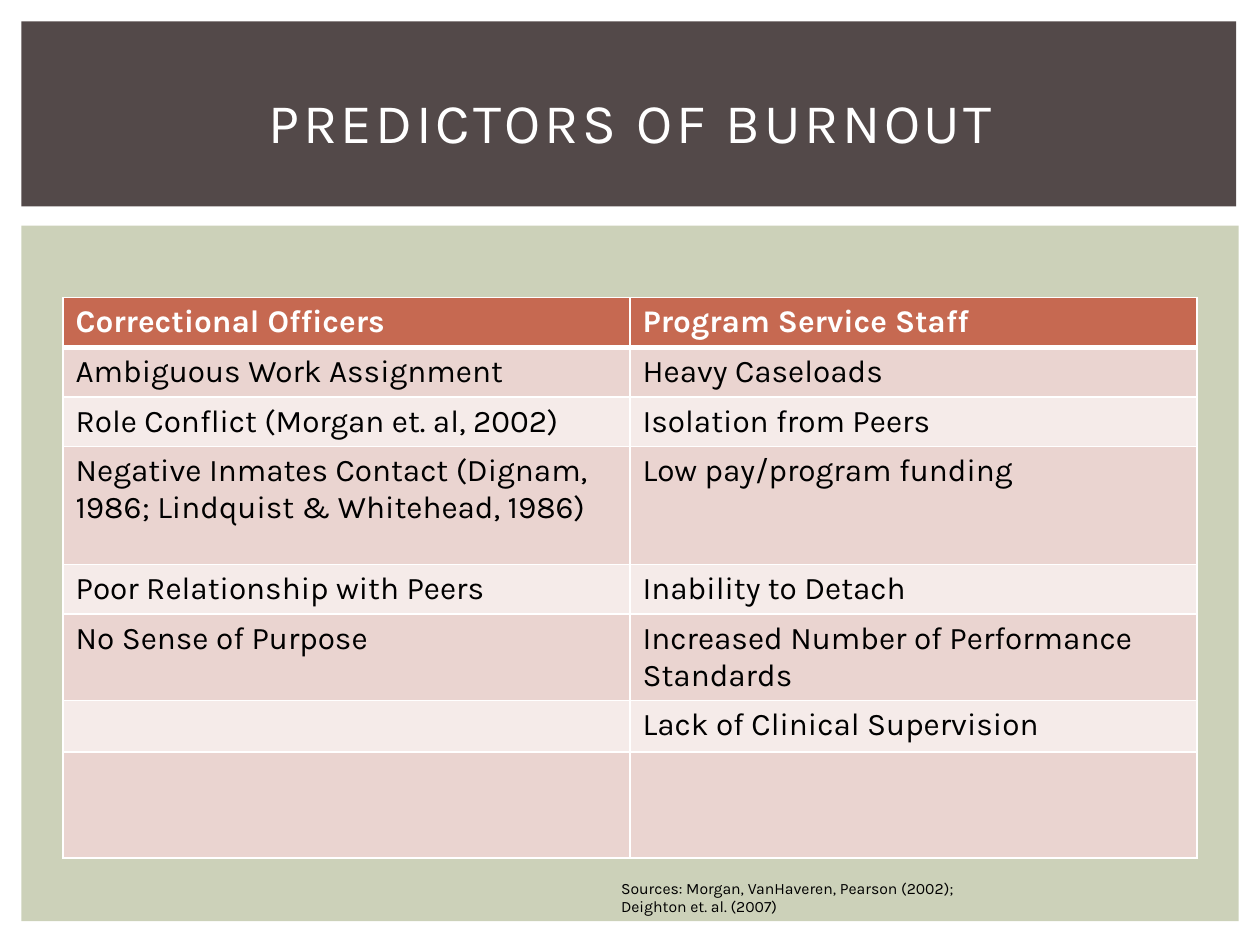
import lxml.etree
import pptx
import pptx.dml.color
import pptx.enum.shapes
import pptx.enum.text
import pptx.oxml.ns
import pptx.util

Cm = pptx.util.Cm
RGBColor = pptx.dml.color.RGBColor

WHITE = RGBColor(0xFF, 0xFF, 0xFF)
BLACK = RGBColor(0x00, 0x00, 0x00)
SAGE = RGBColor(0xCC, 0xD1, 0xB9)
BROWN = RGBColor(0x53, 0x49, 0x49)
RUST = RGBColor(0xC6, 0x69, 0x51)
PINK = RGBColor(0xEA, 0xD4, 0xD0)
PALE_PINK = RGBColor(0xF5, 0xEB, 0xE9)


def write_text(text_frame, text, size=18, color=BLACK, bold=False, alignment=None, spacing=0):
    """Write one paragraph per line of text; spacing is the letter spacing in points."""
    text_frame.word_wrap = True
    for index, line in enumerate(text.split("\n")):
        paragraph = text_frame.add_paragraph() if index else text_frame.paragraphs[0]
        paragraph.alignment = alignment
        run = paragraph.add_run()
        run.text = line
        run.font.name = "Karla"
        run.font.size = pptx.util.Pt(size)
        run.font.bold = bold
        run.font.color.rgb = color
        if spacing:
            run.font._element.set("spc", str(spacing * 100))


def add_borders(cell, widths):
    """Draw white borders; widths gives points for left, right, top and bottom."""
    properties = cell._tc.get_or_add_tcPr()
    for index, (side, width) in enumerate(zip("LRTB", widths)):
        line = lxml.etree.Element(pptx.oxml.ns.qn(f"a:ln{side}"), w=str(pptx.util.Pt(width)))
        fill = lxml.etree.SubElement(line, pptx.oxml.ns.qn("a:solidFill"))
        lxml.etree.SubElement(fill, pptx.oxml.ns.qn("a:srgbClr"), val=str(WHITE))
        properties.insert(index, line)


presentation = pptx.Presentation()
presentation.slide_width = Cm(25.4)
presentation.slide_height = Cm(19.05)
slide = presentation.slides.add_slide(presentation.slide_layouts[6])

# Background panels: content area and title band
for top, width, height, color in ((4.55, 24.54, 14.02, SAGE), (0.43, 24.49, 3.73, BROWN)):
    panel = slide.shapes.add_shape(
        pptx.enum.shapes.MSO_SHAPE.RECTANGLE, Cm(0.43), Cm(top), Cm(width), Cm(height)
    )
    panel.shadow.inherit = False
    panel.fill.solid()
    panel.fill.fore_color.rgb = color
    panel.line.fill.background()

# Table of predictors
rows = (
    (0.97, "Correctional Officers", "Program Service Staff"),
    (0.97, "Ambiguous Work Assignment", "Heavy Caseloads"),
    (0.97, "Role Conflict (Morgan et. al, 2002)", "Isolation from Peers"),
    (2.38, "Negative Inmates Contact (Dignam, 1986; Lindquist & Whitehead, 1986)",
     "Low pay/program funding"),
    (0.97, "Poor Relationship with Peers", "Inability to Detach"),
    (1.68, "No Sense of Purpose", "Increased Number of Performance Standards"),
    (0.97, "", "Lack of Clinical Supervision"),
    (2.14, "", ""),
)
table = slide.shapes.add_table(
    len(rows), 2, Cm(1.27), Cm(6), Cm(22.86), Cm(sum(row[0] for row in rows))
).table
for row_index, (height, *texts) in enumerate(rows):
    table.rows[row_index].height = Cm(height)
    is_header = row_index == 0
    row_color = RUST if is_header else (PALE_PINK, PINK)[row_index % 2]
    top_width = 3 if row_index == 1 else 1
    bottom_width = 3 if is_header else 1
    for column_index, text in enumerate(texts):
        cell = table.cell(row_index, column_index)
        cell.fill.solid()
        cell.fill.fore_color.rgb = row_color
        add_borders(cell, (1, 1, top_width, bottom_width))
        if text:
            write_text(cell.text_frame, text, color=WHITE if is_header else BLACK, bold=is_header)

# Title
title = slide.shapes.add_textbox(Cm(1.07), Cm(0.99), Cm(23.29), Cm(2.92))
title.text_frame.vertical_anchor = pptx.enum.text.MSO_ANCHOR.MIDDLE
write_text(title.text_frame, "PREDICTORS OF BURNOUT", size=32, color=WHITE,
           alignment=pptx.enum.text.PP_ALIGN.CENTER, spacing=2)

# Sources
sources = slide.shapes.add_textbox(Cm(12.27), Cm(17.58), Cm(10.26), Cm(1.02))
write_text(sources.text_frame,
           "Sources: Morgan, VanHaveren, Pearson (2002);\nDeighton et. al. (2007)", size=9)

presentation.save("out.pptx")
